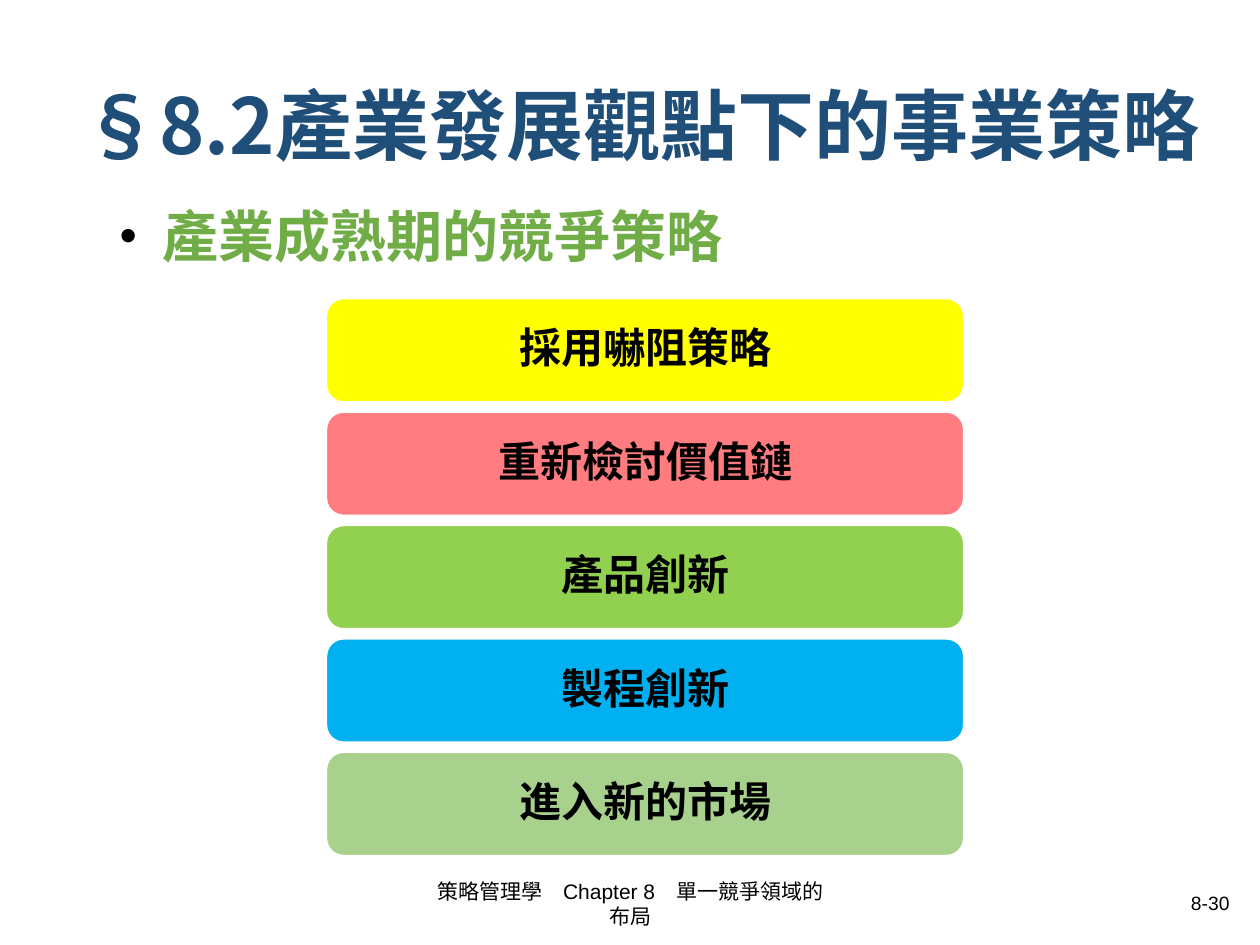
from lxml.etree import SubElement
from pptx import Presentation
from pptx.dml.color import RGBColor
from pptx.enum.shapes import MSO_SHAPE
from pptx.enum.text import MSO_ANCHOR, MSO_AUTO_SIZE, PP_ALIGN
from pptx.oxml.ns import qn
from pptx.util import Cm, Pt

CJK = "Noto Sans CJK SC"
COLORS = {
    "navy": "1F4E79", "green": "70AD47", "black": "000000", "white": "FFFFFF",
    "yellow": "FFFF00", "coral": "FF7C80", "lime": "92D050",
    "sky": "00B0F0", "sage": "A9D18E",
}
STRATEGIES = [
    ("採用嚇阻策略", "yellow"),
    ("重新檢討價值鏈", "coral"),
    ("產品創新", "lime"),
    ("製程創新", "sky"),
    ("進入新的市場", "sage"),
]


def rgb(name):
    return RGBColor.from_string(COLORS[name])


def place(sp, box):
    sp.left, sp.top, sp.width, sp.height = (Cm(v) for v in box)


def add_bullet(p, hanging, percent):
    pPr = p._p.get_or_add_pPr()
    pPr.set("marL", str(Cm(hanging)))
    pPr.set("indent", str(-Cm(hanging)))
    color = SubElement(pPr, qn("a:buClr"))
    SubElement(color, qn("a:srgbClr"), val=COLORS["black"])
    SubElement(pPr, qn("a:buSzPct"), val=str(percent * 1000))
    SubElement(pPr, qn("a:buFont"), typeface="Arial")
    SubElement(pPr, qn("a:buChar"), char="•")


def write(sp, text, size, color="black", font=CJK, bold=True,
          align=PP_ALIGN.LEFT, anchor=MSO_ANCHOR.MIDDLE, spacing=None, bullet=False):
    tf = sp.text_frame
    tf.word_wrap = True
    tf.auto_size = MSO_AUTO_SIZE.NONE
    tf.vertical_anchor = anchor
    p = tf.paragraphs[0]
    p.alignment = align
    if spacing:
        p.line_spacing = spacing
    if bullet:
        add_bullet(p, hanging=0.86, percent=88)
    r = p.add_run()
    r.text = text
    r.font.size = Pt(size)
    r.font.bold = bold
    r.font.name = font
    r.font.color.rgb = rgb(color)
    SubElement(r._r.get_or_add_rPr(), qn("a:ea"), typeface=CJK)


def add_text(slide, box, text, size, **fmt):
    sp = slide.shapes.add_textbox(*(Cm(v) for v in box))
    write(sp, text, size, **fmt)


def add_heading(slide, box):
    title = slide.shapes.title
    place(title, box)
    write(title, "§8.2產業發展觀點下的事業策略", 44, color="navy", spacing=0.9)


def add_strategies(slide, box, gap):
    """Stack one rounded bar per strategy, evenly filling the box."""
    left, top, width, height = box
    bar_height = (height + gap) / len(STRATEGIES) - gap
    for i, (text, color) in enumerate(STRATEGIES):
        sp = slide.shapes.add_shape(MSO_SHAPE.ROUNDED_RECTANGLE, 0, 0, 0, 0)
        place(sp, (left, top + i * (bar_height + gap), width, bar_height))
        sp.shadow.inherit = False
        sp.fill.solid()
        sp.fill.fore_color.rgb = rgb(color)
        sp.line.color.rgb = rgb("white")
        sp.line.width = Pt(1)
        write(sp, text, 24, align=PP_ALIGN.CENTER, spacing=0.9)


def add_footer(slide, box):
    left, top, width, height = box
    add_text(slide, (left, top, 8.59, height), "策略管理學　Chapter 8　單一競爭領域的布局", 12,
             font="Arial", bold=False, align=PP_ALIGN.CENTER)
    number_width = 7.11
    add_text(slide, (left + width - number_width, top, number_width, height), "8-30", 11,
             font="Arial", bold=False, align=PP_ALIGN.RIGHT)


def main():
    prs = Presentation()
    prs.slide_width, prs.slide_height = Cm(25.4), Cm(19.05)
    slide = prs.slides.add_slide(prs.slide_layouts[5])
    add_heading(slide, (1.4, 1.57, 23.24, 2.08))
    add_text(slide, (2.16, 3.94, 21.11, 12.57), "產業成熟期的競爭策略", 32,
             color="green", anchor=MSO_ANCHOR.TOP, bullet=True)
    add_strategies(slide, (6.58, 6.02, 12.85, 11.23), gap=0.2)
    add_footer(slide, (8.41, 17.7, 16.63, 1.02))
    prs.save("out.pptx")


if __name__ == "__main__":
    main()
